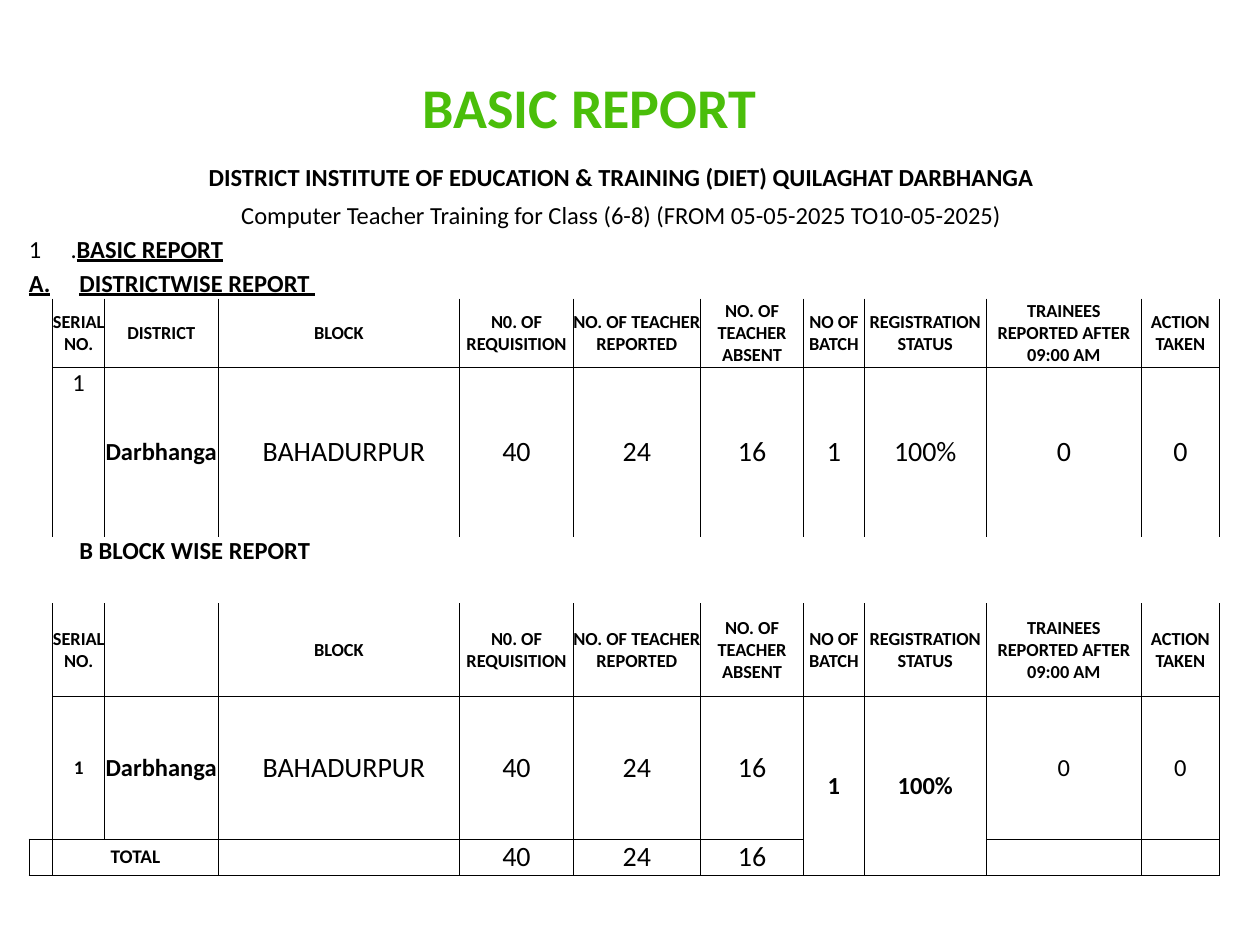
from lxml.etree import SubElement
from pptx import Presentation
from pptx.dml.color import RGBColor
from pptx.enum.text import MSO_ANCHOR as Anchor, PP_ALIGN as Align
from pptx.oxml.ns import qn
from pptx.util import Inches, Pt

FONT = "Calibri"
COLORS = {"title": "4ABE0A", "text": "000000", "line": "000000", "cell": "FFFFFF"}

COLUMN_WIDTHS = [0.19, 0.41, 0.9, 1.92, 0.9, 1.01, 0.82, 0.48, 0.97, 1.23, 0.62]
ROW_HEIGHTS = [0.28, 0.3, 0.27, 0.27, 0.55, 1.34, 0.53, 0.74, 1.13, 0.29]
DISTRICT_HEAD, DISTRICT_DATA, BLOCK_HEAD, BLOCK_DATA, TOTAL = 4, 5, 7, 8, 9
LAST_COLUMN = len(COLUMN_WIDTHS) - 1
BATCH, STATUS = 7, 8

# row: (runs as (text, bold, underline), alignment, anchor, left margin, tab stop)
BANNERS = {
    0: ([("DISTRICT INSTITUTE OF EDUCATION & TRAINING (DIET) QUILAGHAT DARBHANGA ", True, False)],
        Align.CENTER, Anchor.BOTTOM, 0, None),
    1: ([("Computer Teacher Training for Class (6-8) (FROM 05-05-2025 TO10-05-2025) ", False, False)],
        Align.CENTER, Anchor.BOTTOM, 0, None),
    2: ([("1\t.", False, False), ("BASIC REPORT", True, True)],
        Align.LEFT, Anchor.BOTTOM, 0, 0.33),
    3: ([("A.\tDISTRICTWISE REPORT ", True, True)],
        Align.LEFT, Anchor.BOTTOM, 0, 0.4),
    6: ([("B BLOCK WISE REPORT", True, False)],
        Align.LEFT, Anchor.TOP, 0.4, None),
}

HEADINGS = ["SERIAL NO.", "DISTRICT", "BLOCK", "N0. OF REQUISITION",
            "NO. OF TEACHER REPORTED", "NO. OF TEACHER ABSENT", "NO OF BATCH",
            "REGISTRATION STATUS", "TRAINEES REPORTED AFTER 09:00 AM", "ACTION TAKEN"]
VALUES = ["1", "Darbhanga", "BAHADURPUR", "40", "24", "16", "1", "100%", "0", "0"]
BODY = {
    DISTRICT_HEAD: HEADINGS,
    DISTRICT_DATA: VALUES,
    BLOCK_HEAD: ["" if heading == "DISTRICT" else heading for heading in HEADINGS],
    BLOCK_DATA: VALUES,
    TOTAL: ["TOTAL", "", "", "40", "24", "16", "", "", "", ""],
}

# (size, bold) by row, with the cells that differ
ROW_STYLES = {DISTRICT_HEAD: (10.5, True), DISTRICT_DATA: (16, False),
              BLOCK_HEAD: (10.5, True), BLOCK_DATA: (16, False), TOTAL: (16, False)}
CELL_STYLES = {
    (DISTRICT_DATA, 1): (14, False), (DISTRICT_DATA, 2): (14, True),
    (BLOCK_DATA, 1): (11, True), (BLOCK_DATA, 2): (14, True),
    (BLOCK_DATA, BATCH): (14, True), (BLOCK_DATA, STATUS): (14, True),
    (BLOCK_DATA, 9): (14, False), (BLOCK_DATA, 10): (14, False),
    (TOTAL, 1): (11, True),
}


def set_font(font, size, bold, color="text"):
    font.name = FONT
    font.size = Pt(size)
    font.bold = bold
    font.color.rgb = RGBColor.from_string(COLORS[color])


def visible_sides(row, column):
    """Return the sides of a cell that carry a line, as letters of LRTB."""
    if row in BANNERS:
        return ""
    if column == 0:
        return {BLOCK_DATA: "RB", TOTAL: "LRTB"}.get(row, "R")
    if row == TOTAL:
        if column in (BATCH, STATUS):
            return "LRB"
        return "RTB" if column == 2 else "LRTB"
    return "LR" + {DISTRICT_DATA: "T", BLOCK_DATA: "TB"}.get(row, "B")


def set_borders(cell, sides):
    properties = cell._tc.get_or_add_tcPr()
    for position, side in enumerate("LRTB"):
        line = SubElement(properties, qn(f"a:ln{side}"), w=str(Pt(0.5)))
        if side in sides:
            fill = SubElement(line, qn("a:solidFill"))
            SubElement(fill, qn("a:srgbClr"), val=COLORS["line"])
        else:
            SubElement(line, qn("a:noFill"))
        properties.insert(position, line)


def prepare_cell(cell, row, column):
    cell.margin_left = cell.margin_right = cell.margin_top = cell.margin_bottom = 0
    cell.vertical_anchor = Anchor.MIDDLE
    if column and (row in (DISTRICT_HEAD, BLOCK_HEAD)
                   or row in (DISTRICT_DATA, BLOCK_DATA) and column < 3):
        cell.fill.solid()
        cell.fill.fore_color.rgb = RGBColor.from_string(COLORS["cell"])
    else:
        cell.fill.background()
    set_borders(cell, visible_sides(row, column))
    set_font(cell.text_frame.paragraphs[0].font, 10.5, False)


def fill_banner(table, row, runs, alignment, anchor, margin, tab_stop):
    cell = table.cell(row, 0)
    cell.merge(table.cell(row, LAST_COLUMN))
    cell.vertical_anchor = anchor
    cell.margin_left = Inches(margin)
    paragraph = cell.text_frame.paragraphs[0]
    paragraph.alignment = alignment
    if tab_stop:
        properties = paragraph._p.get_or_add_pPr()
        tabs = SubElement(properties, qn("a:tabLst"))
        SubElement(tabs, qn("a:tab"), pos=str(Inches(tab_stop)), algn="l")
        properties.insert(0, tabs)
    for text, bold, underline in runs:
        run = paragraph.add_run()
        run.text = text
        set_font(run.font, 14, bold)
        run.font.underline = underline


def fill_body(table, row, texts):
    for column, text in enumerate(texts, start=1):
        merged_away = row == TOTAL and column in (BATCH, STATUS)
        if not text or merged_away:
            continue
        cell = table.cell(row, column)
        cell.text = text
        if text == "BAHADURPUR":
            cell.margin_left = Inches(0.08)
        if row in (DISTRICT_DATA, BLOCK_DATA) and column == 1 and row == DISTRICT_DATA:
            cell.vertical_anchor = Anchor.TOP
        paragraph = cell.text_frame.paragraphs[0]
        paragraph.alignment = Align.CENTER
        set_font(paragraph.font, *CELL_STYLES.get((row, column), ROW_STYLES[row]))


def add_report_table(slide):
    table = slide.shapes.add_table(
        len(ROW_HEIGHTS), len(COLUMN_WIDTHS), Inches(0.23), Inches(1.25),
        Inches(sum(COLUMN_WIDTHS)), Inches(sum(ROW_HEIGHTS))).table
    table.first_row = table.horz_banding = False
    for column, width in zip(table.columns, COLUMN_WIDTHS):
        column.width = Inches(width)
    for row, height in zip(table.rows, ROW_HEIGHTS):
        row.height = Inches(height)
    for row in range(len(ROW_HEIGHTS)):
        for column in range(len(COLUMN_WIDTHS)):
            prepare_cell(table.cell(row, column), row, column)
    for row, banner in BANNERS.items():
        fill_banner(table, row, *banner)
    for row, texts in BODY.items():
        fill_body(table, row, texts)
    for column in (BATCH, STATUS):
        table.cell(BLOCK_DATA, column).merge(table.cell(TOTAL, column))
    table.cell(TOTAL, 1).merge(table.cell(TOTAL, 2))


def main():
    presentation = Presentation()
    presentation.slide_width, presentation.slide_height = Inches(10), Inches(7.5)
    slide = presentation.slides.add_slide(presentation.slide_layouts[5])

    title = slide.shapes.title
    title.left, title.top = Inches(0.43), Inches(0.52)
    title.width, title.height = Inches(8.5), Inches(0.65)
    title.text = "BASIC REPORT"
    title.text_frame.vertical_anchor = Anchor.MIDDLE
    paragraph = title.text_frame.paragraphs[0]
    paragraph.alignment = Align.CENTER
    set_font(paragraph.font, 32, True, "title")

    add_report_table(slide)
    presentation.save("out.pptx")


if __name__ == "__main__":
    main()
